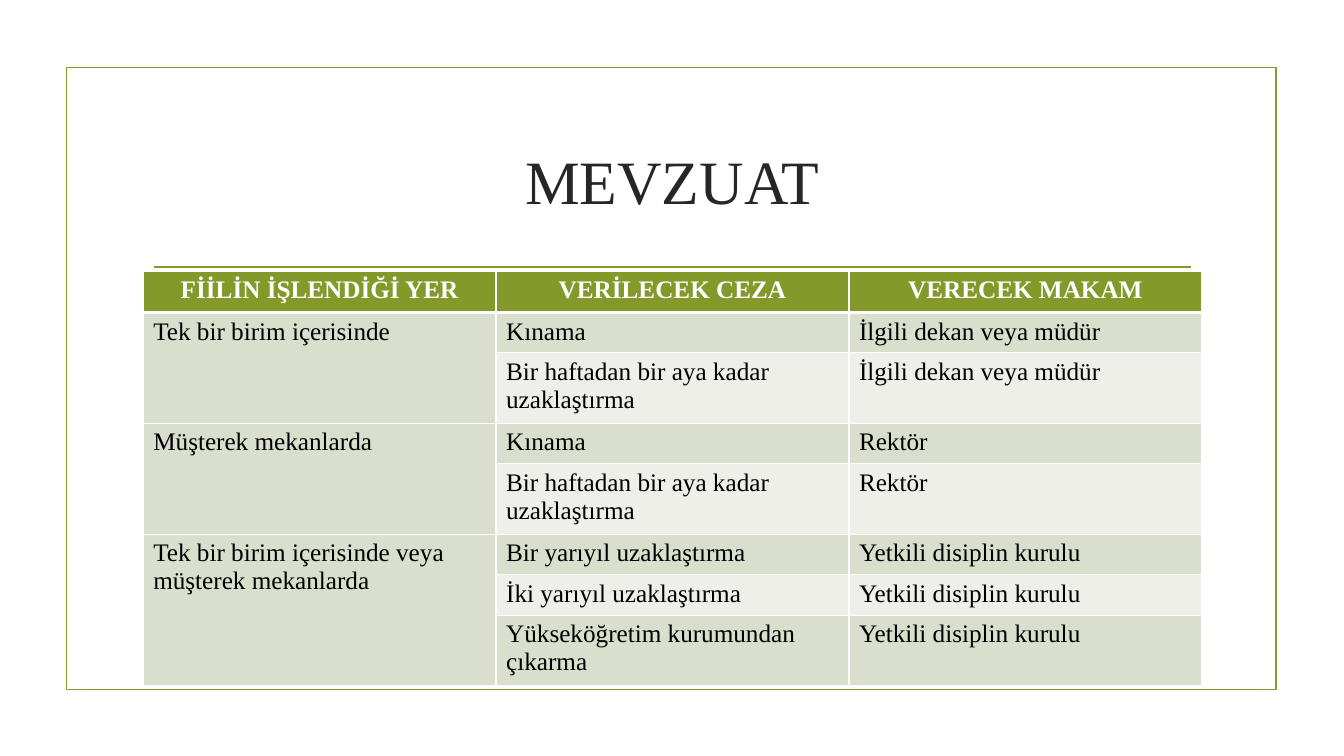
from dataclasses import dataclass

from lxml.etree import SubElement
from pptx import Presentation
from pptx.dml.color import RGBColor
from pptx.enum.shapes import MSO_CONNECTOR, MSO_SHAPE
from pptx.enum.text import MSO_ANCHOR, PP_ALIGN
from pptx.oxml.ns import qn
from pptx.util import Inches, Pt


@dataclass(frozen=True)
class Theme:
    font: str = "Times New Roman"
    green: str = "83992A"
    title: str = "262626"
    text: str = "000000"
    white: str = "FFFFFF"
    band_dark: str = "D9DECD"
    band_light: str = "EDEFE8"
    title_size: int = 44
    table_size: int = 18
    line_width: float = 1.25


theme = Theme()


def style_text(para, size, color, align, bold=False):
    para.alignment = align
    for span in para.runs:
        span.font.name = theme.font
        span.font.size = Pt(size)
        span.font.bold = bold
        span.font.color.rgb = RGBColor.from_string(color)


def add_border(cell, side, width):
    line = SubElement(cell._tc.get_or_add_tcPr(), qn(f"a:{side}"), w=str(Pt(width)))
    fill = SubElement(line, qn("a:solidFill"))
    SubElement(fill, qn("a:srgbClr"), val=theme.white)


deck = Presentation()
deck.slide_width = Inches(13.33)
deck.slide_height = Inches(7.5)
page = deck.slides.add_slide(deck.slide_layouts[6])

frame = page.shapes.add_shape(
    MSO_SHAPE.RECTANGLE, Inches(0.66), Inches(0.67), Inches(12), Inches(6.17))
frame.shadow.inherit = False
frame.fill.background()

rule = page.shapes.add_connector(
    MSO_CONNECTOR.STRAIGHT, Inches(1.53), Inches(2.65), Inches(11.81), Inches(2.65))
SubElement(rule._element.spPr, qn("a:effectLst"))

for outline in (frame.line, rule.line):
    outline.color.rgb = RGBColor.from_string(theme.green)
    outline.width = Pt(theme.line_width)

title = page.shapes.add_textbox(Inches(1.42), Inches(1.07), Inches(10.5), Inches(1.43))
title.text_frame.word_wrap = True
title.text_frame.vertical_anchor = MSO_ANCHOR.MIDDLE
title.text_frame.text = "MEVZUAT"
style_text(title.text_frame.paragraphs[0], theme.title_size, theme.title, PP_ALIGN.CENTER)

headers = ("FİİLİN İŞLENDİĞİ YER", "VERİLECEK CEZA", "VERECEK MAKAM")
short_ban = "Bir haftadan bir aya kadar uzaklaştırma"
places = [
    ("Tek bir birim içerisinde", "İlgili dekan veya müdür", ["Kınama", short_ban]),
    ("Müşterek mekanlarda", "Rektör", ["Kınama", short_ban]),
    ("Tek bir birim içerisinde veya müşterek mekanlarda", "Yetkili disiplin kurulu",
     ["Bir yarıyıl uzaklaştırma", "İki yarıyıl uzaklaştırma",
      "Yükseköğretim kurumundan çıkarma"]),
]
row_heights = (0.41, 0.38, 0.65, 0.38, 0.65, 0.38, 0.38, 0.65)

rows = [headers]
merges = []
for place, authority, penalties in places:
    merges.append((len(rows), len(rows) + len(penalties) - 1))
    for index, penalty in enumerate(penalties):
        rows.append(("" if index else place, penalty, authority))

table = page.shapes.add_table(
    len(rows), len(headers), Inches(1.42), Inches(2.69),
    Inches(10.5), Inches(sum(row_heights))).table

for column in table.columns:
    column.width = Inches(3.5)

for row_index, (texts, height) in enumerate(zip(rows, row_heights)):
    table.rows[row_index].height = Inches(height)
    is_header = row_index == 0
    band = theme.band_dark if row_index % 2 else theme.band_light
    for column_index, text in enumerate(texts):
        cell = table.cell(row_index, column_index)
        for side in ("lnL", "lnR", "lnT", "lnB"):
            thick = (is_header and side == "lnB") or (row_index == 1 and side == "lnT")
            add_border(cell, side, 3 if thick else 1)
        cell.fill.solid()
        fill = theme.green if is_header else band if column_index else theme.band_dark
        cell.fill.fore_color.rgb = RGBColor.from_string(fill)
        cell.text_frame.text = text
        style_text(
            cell.text_frame.paragraphs[0], theme.table_size,
            theme.white if is_header else theme.text,
            PP_ALIGN.CENTER if is_header else PP_ALIGN.LEFT, is_header)

for first, last in merges:
    table.cell(first, 0).merge(table.cell(last, 0))

deck.save("out.pptx")
